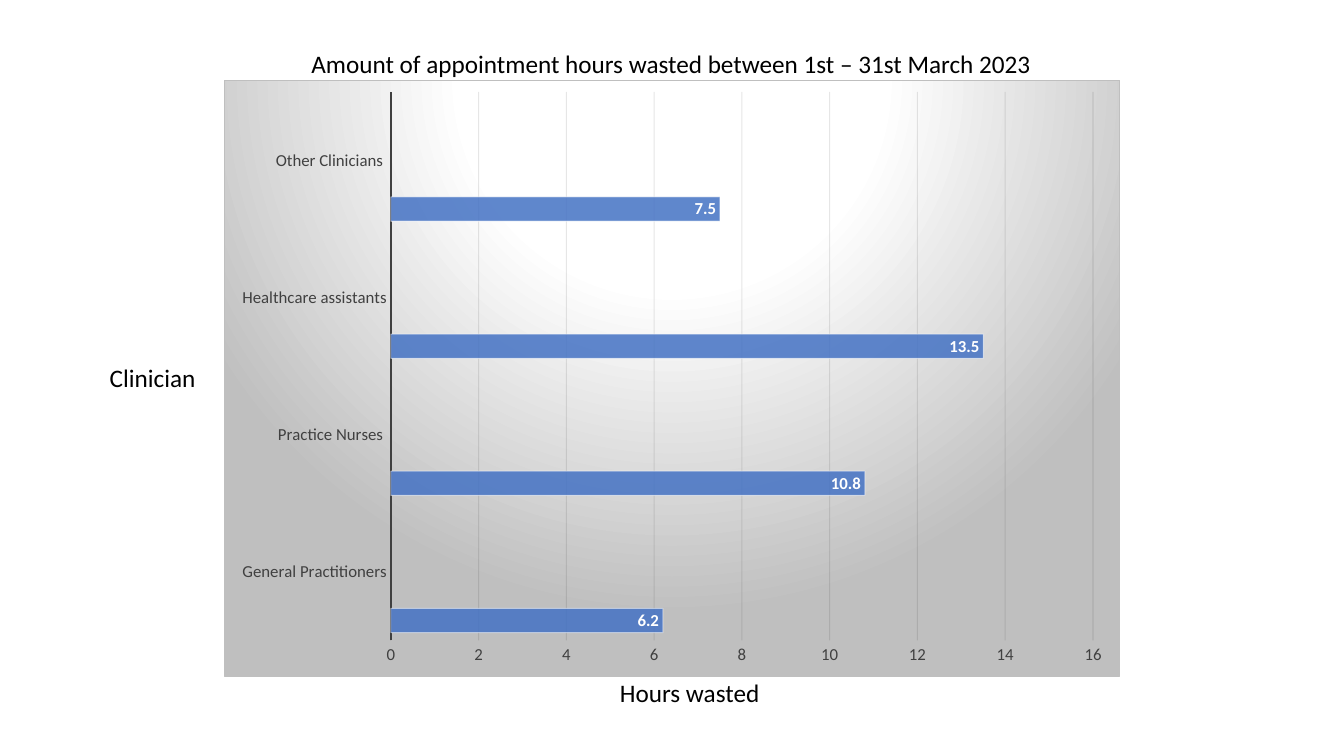
"""Build a slide with a bar chart of wasted appointment hours per clinician."""
from dataclasses import dataclass

from lxml import etree
from pptx import Presentation
from pptx.chart.data import CategoryChartData
from pptx.dml.color import RGBColor
from pptx.enum.chart import XL_CHART_TYPE, XL_LABEL_POSITION, XL_TICK_MARK
from pptx.oxml import parse_xml
from pptx.oxml.ns import nsdecls, qn
from pptx.util import Inches, Pt

CLUSTERED = XL_CHART_TYPE.BAR_CLUSTERED
INSIDE_END = XL_LABEL_POSITION.INSIDE_END
NO_TICK = XL_TICK_MARK.NONE

HOURS_WASTED = {
    "General Practitioners": 6.2,
    "Practice Nurses ": 10.8,
    "Healthcare assistants": 13.5,
    "Other Clinicians ": 7.5,
}
CAPTIONS = [
    ("Amount of appointment hours wasted between 1st – 31st March 2023", (2.99, 0.43, 8.12, 1.01)),
    ("Hours wasted", (6.05, 6.67, 1.78, 0.4)),
    ("Clinician", (0.99, 3.55, 1.33, 0.4)),
]
SLIDE_SIZE = (13.33, 7.5)
CHART_SHARE = 2 / 3
CHART_TOP = 0.79


@dataclass(frozen=True)
class Theme:
    """Colours, type sizes and opacities of the slide."""
    font: str = "Calibri"
    caption_size: int = 18
    chart_size: int = 12
    black: str = "000000"
    white: str = "FFFFFF"
    axis: str = "404040"
    grid: str = "0D0D0D"
    edge: str = "BFBFBF"
    series: tuple = ("4472C4", "ED7D31", "A5A5A5", "FFC000", "5B9BD5")
    bar_opacity: int = 85
    outline_opacity: int = 50
    grid_opacity: int = 10


THEME = Theme()


def style_font(font, size, color, bold=False):
    font.name = THEME.font
    font.size = Pt(size)
    font.bold = bold
    font.color.rgb = RGBColor.from_string(color)


def style_line(line, color, width):
    line.color.rgb = RGBColor.from_string(color)
    line.width = Pt(width)


def add_caption(page, text, place):
    box = page.shapes.add_textbox(*map(Inches, place))
    box.text_frame.word_wrap = True
    box.text_frame.text = text
    style_font(box.text_frame.paragraphs[0].runs[0].font, THEME.caption_size, THEME.black)


def style_axes(chart):
    for axis in (chart.category_axis, chart.value_axis):
        axis.major_tick_mark = axis.minor_tick_mark = NO_TICK
        style_font(axis.tick_labels.font, THEME.chart_size, THEME.axis)
    style_line(chart.category_axis.format.line, THEME.axis, 1.5)
    hours = chart.value_axis
    hours.minimum_scale, hours.maximum_scale, hours.major_unit = 0, 16, 2
    hours.format.line.fill.background()
    hours.has_major_gridlines = True
    style_line(hours.major_gridlines.format.line, THEME.grid, 0.75)


def style_bars(plot):
    plot.gap_width = 65
    plot.overlap = 0
    plot.vary_by_categories = False
    for series, color in zip(plot.series, THEME.series):
        series.format.fill.solid()
        series.format.fill.fore_color.rgb = RGBColor.from_string(color)
        series.invert_if_negative = False
        style_line(series.format.line, THEME.white, 0.75)
        labels = series.data_labels
        labels.show_value = True
        labels.position = INSIDE_END
        style_font(labels.font, THEME.chart_size, THEME.white, bold=True)


def set_opacity(chart):
    rules = {
        ".//c:ser/c:spPr/a:solidFill/a:srgbClr": THEME.bar_opacity,
        ".//c:ser/c:spPr/a:ln//a:srgbClr": THEME.outline_opacity,
        ".//c:majorGridlines//a:srgbClr": THEME.grid_opacity,
    }
    for query, percent in rules.items():
        for color in chart.element.xpath(query):
            etree.SubElement(color, qn("a:alpha")).set("val", str(percent * 1000))


def set_backdrop(chart):
    stops = "".join(
        f'<a:gs pos="{share * 1000}"><a:srgbClr val="{color}"/></a:gs>'
        for share, color in ((0, THEME.white), (39, THEME.white), (100, THEME.edge))
    )
    backdrop = parse_xml(
        f'<c:spPr {nsdecls("c", "a")}><a:gradFill><a:gsLst>{stops}</a:gsLst>'
        '<a:path path="circle"><a:fillToRect l="50000" t="-80000" r="50000" b="180000"/></a:path>'
        f'</a:gradFill><a:ln w="{Pt(0.75)}"><a:solidFill><a:srgbClr val="{THEME.edge}"/>'
        '</a:solidFill></a:ln></c:spPr>'
    )
    chart.element.find(qn("c:chart")).addnext(backdrop)


def add_hours_chart(page):
    data = CategoryChartData()
    data.categories = list(HOURS_WASTED)
    for number in range(1, len(THEME.series) + 1):
        values = HOURS_WASTED.values() if number == 1 else [None] * len(HOURS_WASTED)
        data.add_series(f"Series {number}", list(values))
    width, height = SLIDE_SIZE
    chart_width = width * CHART_SHARE
    place = ((width - chart_width) / 2, CHART_TOP, chart_width, chart_width * CHART_SHARE)
    chart = page.shapes.add_chart(CLUSTERED, *map(Inches, place), data).chart
    chart.has_title = chart.has_legend = False
    style_font(chart.font, 10, THEME.black)
    style_axes(chart)
    style_bars(chart.plots[0])
    set_opacity(chart)
    set_backdrop(chart)


def main():
    deck = Presentation()
    deck.slide_width, deck.slide_height = map(Inches, SLIDE_SIZE)
    page = deck.slides.add_slide(deck.slide_layouts[6])
    add_hours_chart(page)
    for text, place in CAPTIONS:
        add_caption(page, text, place)
    deck.save("out.pptx")


if __name__ == "__main__":
    main()
